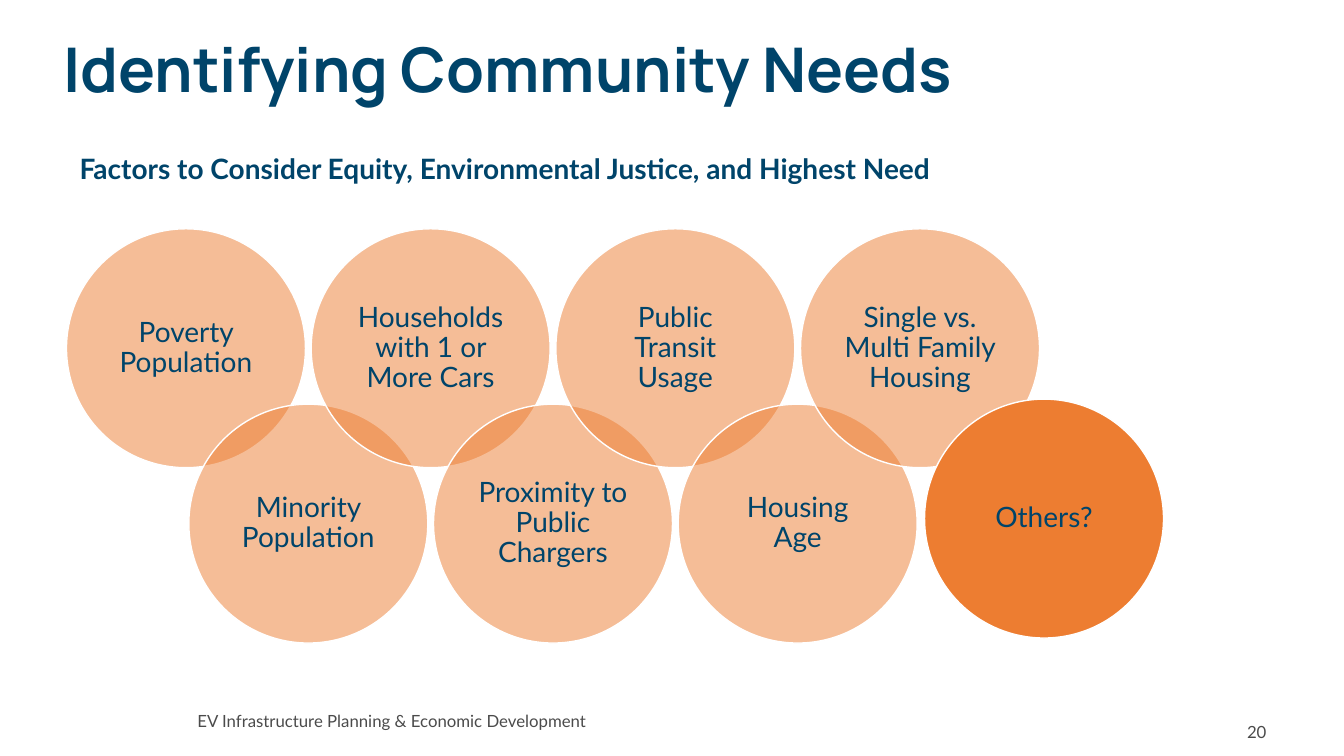
from pptx import Presentation, util as u
from pptx.dml.color import RGBColor
from pptx.enum import shapes, text
from pptx.oxml.ns import qn
from lxml import etree

NAVY, GREY, ORANGE, WHITE = "00446A", "4B4B4B", "ED7D31", "FFFFFF"
LEFT, MID, RIGHT = text.PP_ALIGN.LEFT, text.PP_ALIGN.CENTER, text.PP_ALIGN.RIGHT
TOP, CORE = text.MSO_ANCHOR.TOP, text.MSO_ANCHOR.MIDDLE


def tint(form, code):
    form.rgb = RGBColor.from_string(code)


def write(shape, words, align, anchor, space, code, **font):
    frame = shape.text_frame
    frame.word_wrap = True
    frame.vertical_anchor = anchor
    para = frame.paragraphs[0]
    para.text = words
    para.alignment = align
    para.line_spacing = space
    for key, value in font.items():
        setattr(para.font, key, value)
    tint(para.font.color, code)
    return frame


deck = Presentation()
deck.slide_width, deck.slide_height = u.Inches(13.33), u.Inches(7.5)
slide = deck.slides.add_slide(deck.slide_layouts[6])

factors = [
    "Poverty Population",
    "Minority Population",
    "Households with 1 or More Cars",
    "Proximity to Public Chargers",
    "Public Transit Usage",
    "Housing Age",
    "Single vs. Multi Family Housing",
]
first, last, size = 0.66, 7.94, 2.37
step = (last - first) / (len(factors) - 1)
circles = [(first + step * i, (2.27, 4.01)[i % 2], words, 50) for i, words in enumerate(factors)]
circles.append((9.17, 3.96, "Others?", 100))

for left, top, words, alpha in circles:
    box = [u.Inches(n) for n in (left, top, size, size)]
    disc = slide.shapes.add_shape(shapes.MSO_SHAPE.OVAL, *box)
    disc.shadow.inherit = False
    disc.fill.solid()
    tint(disc.fill.fore_color, ORANGE)
    if alpha < 100:
        shade = disc.element.spPr.find(qn("a:solidFill"))[0]
        etree.SubElement(shade, qn("a:alpha"), val=str(alpha * 1000))
    tint(disc.line.color, WHITE)
    disc.line.width = u.Pt(1)
    frame = write(disc, words, MID, CORE, 0.9, NAVY, name="Lato", size=u.Pt(20))
    for side in ("left", "top", "right", "bottom"):
        setattr(frame, f"margin_{side}", u.Inches(0.08))

labels = [
    ((0.53, 0.06, 11.5, 1.33), "Identifying Community Needs",
     LEFT, CORE, 0.9, NAVY, dict(name="Manrope", size=u.Pt(44), bold=True)),
    ((0.69, 1.49, 10.55, 0.48),
     "Factors to Consider Equity, Environmental Justice, and Highest Need",
     LEFT, TOP, 0.9, NAVY, dict(name="Lato", size=u.Pt(20), bold=True)),
    ((1.86, 6.95, 4.13, 0.4), "EV Infrastructure Planning & Economic Development",
     LEFT, CORE, 1.0, GREY, dict(name="Lato", size=u.Pt(12))),
    ((9.66, 7.06, 3, 0.4), "20",
     RIGHT, CORE, 1.0, GREY, dict(name="Lato", size=u.Pt(12))),
]
for place, words, align, anchor, space, code, font in labels:
    label = slide.shapes.add_textbox(*[u.Inches(n) for n in place])
    write(label, words, align, anchor, space, code, **font)

deck.save("out.pptx")
